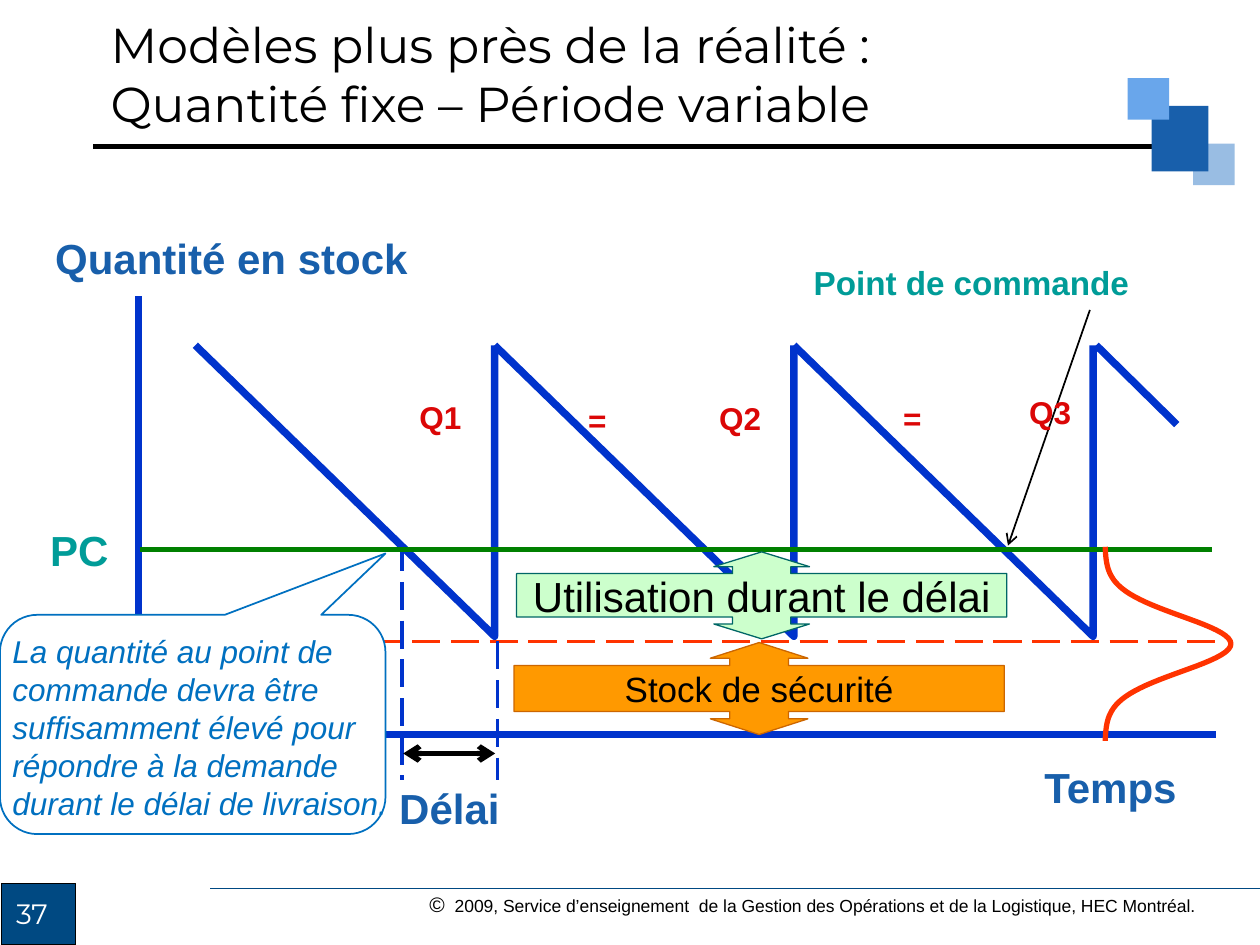
from math import exp
from lxml import etree
from pptx import Presentation
from pptx.dml.color import RGBColor as RGB
from pptx.enum.dml import MSO_LINE
from pptx.enum.shapes import MSO_CONNECTOR as CONN, MSO_SHAPE as SHAPE
from pptx.enum.text import MSO_ANCHOR as ANCHOR, PP_ALIGN as ALIGN
from pptx.oxml.ns import qn
from pptx.util import Inches, Pt

C = {
    "black": "000000", "white": "FFFFFF", "navy": "004982", "title": "185FAB",
    "light": "69A6EB", "pale": "99BDE3", "stock": "0033CC", "safety": "FF3300",
    "point": "008000", "teal": "009C98", "red": "DB0707", "note": "0070C0",
    "mint": "CCFFCC", "pine": "006666", "orange": "FF9900", "rust": "CC6600",
}
LABEL = {"size": 24, "bold": True, "color": "title"}
TEAL = {**LABEL, "color": "teal"}
QTY = {"size": 18, "bold": True, "color": "red"}


def style_run(r, fmt):
    values = {"name": "Arial", "size": 18, "color": "black", **fmt}
    r.font.color.rgb = RGB.from_string(C[values.pop("color")])
    values["size"] = Pt(values["size"])
    for key, value in values.items():
        setattr(r.font, key, value)


def fill_text(tf, runs, align=None, **frame):
    for key, value in {"word_wrap": True, **frame}.items():
        setattr(tf, key, value)
    p = tf.paragraphs[0]
    p.alignment = align
    for text, fmt in runs:
        for i, part in enumerate(text.split("\n")):
            if i:
                p.add_line_break()
            r = p.add_run()
            r.text = part
            style_run(r, fmt)


def add_text(s, box, text, fmt, **frame):
    tb = s.shapes.add_textbox(*map(Inches, box))
    fill_text(tb.text_frame, [(text, fmt)], **frame)
    return tb.text_frame


def style_line(line, color, width):
    line.color.rgb = RGB.from_string(C[color])
    line.width = Pt(width)


def add_shape(s, kind, box, fill, line=None, width=0.75, adj=()):
    sp = s.shapes.add_shape(kind, *map(Inches, box))
    sp.shadow.inherit = False
    sp.fill.solid()
    sp.fill.fore_color.rgb = RGB.from_string(C[fill])
    if line:
        style_line(sp.line, line, width)
    else:
        sp.line.fill.background()
    for i, value in enumerate(adj):
        sp.adjustments[i] = value
    return sp


def add_line(s, x1, y1, x2, y2, color, width, dash=False, ends=()):
    cx = s.shapes.add_connector(CONN.STRAIGHT, *map(Inches, (x1, y1, x2, y2)))
    style_line(cx.line, color, width)
    if dash:
        cx.line.dash_style = MSO_LINE.LONG_DASH
    ln = cx.line._get_or_add_ln()
    for end in ends:
        etree.SubElement(ln, qn(f"a:{end}"), type="arrow")
    etree.SubElement(cx._element.spPr, qn("a:effectLst"))


def add_path(s, points, color, width):
    pts = [(Inches(x), Inches(y)) for x, y in points]
    fb = s.shapes.build_freeform(*pts[0], scale=1.0)
    fb.add_line_segments(pts[1:], close=False)
    sp = fb.convert_to_shape()
    sp.shadow.inherit = False
    sp.fill.background()
    style_line(sp.line, color, width)


def add_header(s, x, y, w, h):
    add_line(s, x - 0.04, y + h, x + 8.63, y + h, "black", 2.75)
    for dx, dy, sw, sh, color in [(8.69, 1.14, 0.33, 0.33, "pale"),
                                  (8.36, 0.84, 0.45, 0.52, "title"),
                                  (8.17, 0.62, 0.33, 0.33, "light")]:
        add_shape(s, SHAPE.RECTANGLE, (x + dx, y + dy, sw, sh), color)
    add_text(s, (x, y, w, h),
             "Modèles plus près de la réalité :\nQuantité fixe – Période variable",
             {"size": 28, "name": "Montserrat"}, vertical_anchor=ANCHOR.MIDDLE)


def add_footer(s, x, y, w, h):
    add_shape(s, SHAPE.RECTANGLE, (x + 0.01, y, 0.59, h), "navy", "black")
    add_text(s, (x + 0.03, y + 0.06, 0.5, 0.4), "37",
             {"size": 16, "name": "Montserrat", "color": "white"})
    add_line(s, x + 1.67, y + 0.04, x + w, y + 0.04, "navy", 0.75)
    tf = add_text(s, (x + 3.31, y + 0.02, 6.42, 0.3), "©", {"size": 12})
    r = tf.paragraphs[0].add_run()
    r.text = ("  2009, Service d’enseignement  de la Gestion des Opérations "
              "et de la Logistique, HEC Montréal.")
    style_run(r, {"size": 10})


def add_stock_graph(s, x, y, w, h):
    top, order, safety, base = y + 0.39, y + 2.01, y + 2.74, y + h
    start, period = x + 0.45, 2.375
    add_path(s, [(x, y), (x, base), (x + w, base)], "stock", 4.25)
    for i in range(3):
        left = start + i * period
        right = left + period
        add_path(s, [(left, top), (right, safety - 0.04), (right, top)], "stock", 4.25)
    add_line(s, x + 7.6, top, x + 8.24, top + 0.63, "stock", 4.25)
    add_line(s, x + 0.02, safety, x + 8.58, safety, "safety", 0, dash=True)
    add_line(s, x + 2.09, order - 0.05, x + 2.09, base + 0.36, "stock", 0, dash=True)
    add_line(s, x + 2.85, safety, x + 2.85, base + 0.36, "stock", 0, dash=True)
    add_path(s, [(x + 0.01, order), (x + 8.52, order)], "point", 3)
    add_line(s, x + 2.1, base + 0.15, x + 2.83, base + 0.15, "black", 3,
             ends=("headEnd", "tailEnd"))
    add_line(s, x + 7.55, y + 0.11, x + 6.9, order - 0.03, "black", 1, ends=("tailEnd",))

    low = {"align": ALIGN.JUSTIFY, "vertical_anchor": ANCHOR.BOTTOM}
    for dx, dy, tw, th, text, fmt, frame in [
        (7.09, 3.64, 1.28, 0.5, "Temps", LABEL, {**low, "word_wrap": False}),
        (1.97, 3.81, 1, 0.5, "Délai", LABEL, low),
        (5.26, -0.32, 2.71, 0.42, "Point de commande", {**TEAL, "size": 19},
         {**low, "word_wrap": False}),
        (-0.76, -0.55, 3.86, 0.5, "Quantité en stock", LABEL, {}),
        (-0.8, 1.76, 0.68, 0.5, "PC", TEAL, {}),
        (2.13, 0.76, 0.54, 0.4, "Q1", QTY, {}),
        (4.51, 0.77, 0.54, 0.4, "Q2", QTY, {}),
        (6.97, 0.72, 0.54, 0.4, "Q3", QTY, {}),
        (3.47, 0.78, 0.69, 0.4, "=", QTY, {}),
        (5.97, 0.77, 0.69, 0.4, "=", QTY, {}),
    ]:
        add_text(s, (x + dx, y + dy, tw, th), text, fmt, **frame)

    for dx, dy, sh, text, size, fill, line, adj in [
        (3, 2.03, 0.69, "Utilisation durant le délai", 24, "mint", "pine",
         (0.67, 0.55, 0.17, 0.5)),
        (2.98, 2.75, 0.73, "Stock de sécurité", 20, "orange", "rust",
         (0.64, 0.53, 0.17, 0.5)),
    ]:
        sp = add_shape(s, SHAPE.UP_DOWN_ARROW_CALLOUT, (x + dx, y + dy, 3.89, sh),
                       fill, line, adj=adj)
        fill_text(sp.text_frame, [(text, {"size": size})], ALIGN.CENTER,
                  word_wrap=False, vertical_anchor=ANCHOR.MIDDLE)


def add_demand_curve(s, x, y, w, h):
    steps, sigma = 70, 0.22
    offsets = [h * (i / steps - 0.5) for i in range(steps + 1)]
    add_path(s, [(x + w * exp(-(d / sigma) ** 2 / 2), y + h / 2 + d) for d in offsets],
             "safety", 3)


def add_note(s, x, y, w, h):
    add_shape(s, SHAPE.ROUNDED_RECTANGULAR_CALLOUT, (x, y, w, h), "white", "note", 1,
              (0.5, -0.78, 0.17))
    add_text(s, (x, y + 0.09, w + 0.24, h - 0.13),
             "La quantité au point de commande devra être suffisamment élevé pour "
             "répondre à la demande durant le délai de livraison.",
             {"italic": True, "color": "note"})


def main():
    prs = Presentation()
    prs.slide_width, prs.slide_height = Inches(10), Inches(7.5)
    s = prs.slides.add_slide(prs.slide_layouts[6])
    add_footer(s, 0, 7.01, 10, 0.49)
    add_header(s, 0.78, 0, 9.22, 1.16)
    add_stock_graph(s, 1.1, 2.35, 8.55, 3.48)
    add_demand_curve(s, 8.77, 4.34, 1, 1.54)
    add_note(s, 0, 4.88, 3.06, 1.74)
    prs.save("out.pptx")


if __name__ == "__main__":
    main()
